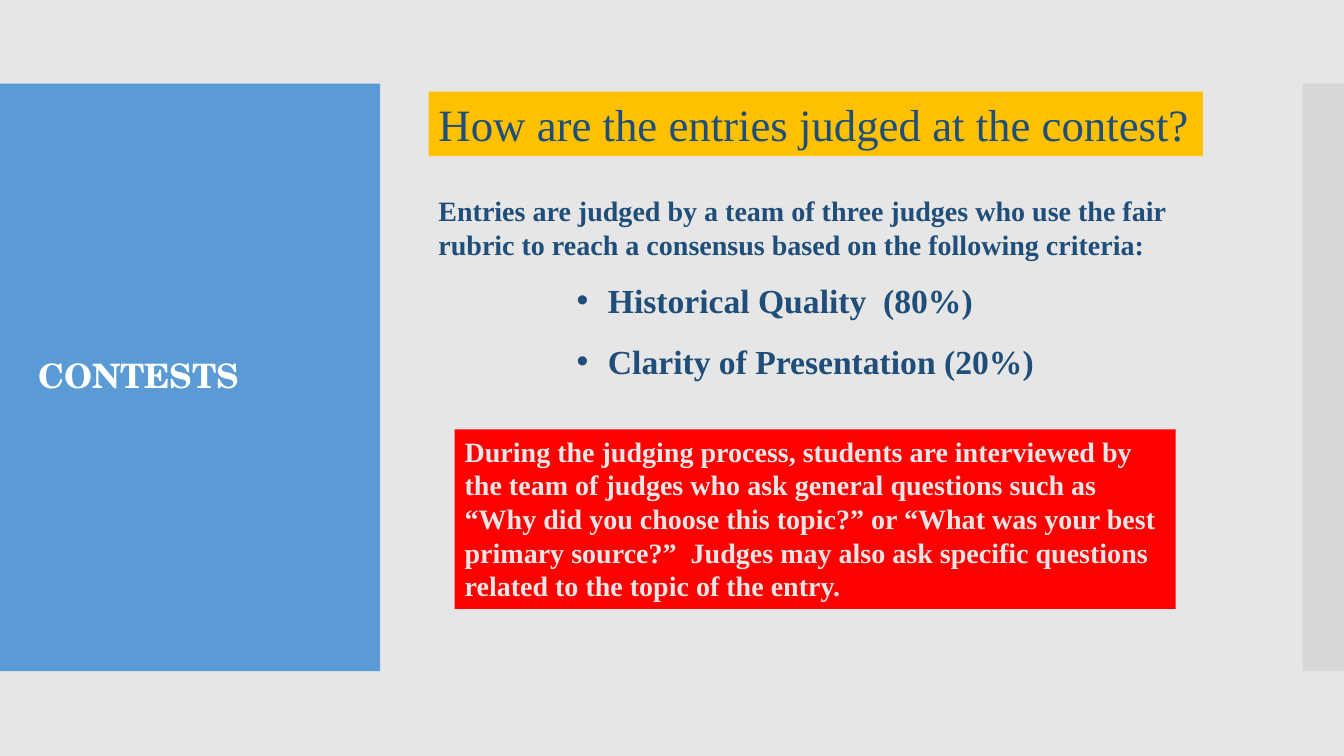
from dataclasses import dataclass

from lxml import etree
from pptx import Presentation
from pptx.dml.color import RGBColor
from pptx.enum.shapes import MSO_SHAPE
from pptx.enum.text import MSO_ANCHOR, MSO_AUTO_SIZE, PP_ALIGN
from pptx.oxml.ns import qn
from pptx.util import Inches, Pt

RECT = MSO_SHAPE.RECTANGLE
TOP, MIDDLE = MSO_ANCHOR.TOP, MSO_ANCHOR.MIDDLE
LEFT = PP_ALIGN.LEFT
NO_FIT = MSO_AUTO_SIZE.NONE


@dataclass(frozen=True)
class Theme:
    background: str = "E7E6E6"
    panel: str = "5B9BD5"
    edge: str = "C8C8C8"
    banner: str = "FFC000"
    alert: str = "FF0000"
    ink: str = "1E4E79"
    white: str = "FFFFFF"
    title_font: str = "TeX Gyre Schola"
    body_font: str = "Times New Roman"
    heading: int = 32
    large: int = 24
    normal: int = 20


THEME = Theme()


def set_attrs(obj, values):
    for name, value in values.items():
        setattr(obj, name, value)


def place(sp, box):
    names = ("left", "top", "width", "height")
    set_attrs(sp, dict(zip(names, map(Inches, box))))


def add_block(slide, box, color, alpha=None):
    sp = slide.shapes.add_shape(RECT, *map(Inches, box))
    sp.shadow.inherit = False
    sp.fill.solid()
    sp.fill.fore_color.rgb = RGBColor.from_string(color)
    sp.line.fill.background()
    if alpha is not None:
        clr = sp.fill._xPr.find(".//" + qn("a:srgbClr"))
        etree.SubElement(clr, qn("a:alpha"), val=str(alpha * 1000))
    return sp


def add_label(slide, box):
    return slide.shapes.add_textbox(*map(Inches, box))


def write(sp, lines, size, color, font=THEME.body_font, bold=True,
          anchor=TOP, spacing=1.0):
    tf = sp.text_frame
    set_attrs(tf, {
        "word_wrap": True, "auto_size": NO_FIT, "vertical_anchor": anchor,
        "margin_left": Inches(0.1), "margin_right": Inches(0.1),
        "margin_top": Inches(0.05), "margin_bottom": Inches(0.05),
    })
    tf.text = "\n".join(lines)
    for p in tf.paragraphs:
        set_attrs(p, {"alignment": LEFT, "line_spacing": spacing,
                      "space_before": Pt(0), "space_after": Pt(0)})
        for r in p.runs:
            set_attrs(r.font, {"name": font, "size": Pt(size), "bold": bold})
            r.font.color.rgb = RGBColor.from_string(color)


def add_bullets(sp, color, indent):
    for p in sp.text_frame.paragraphs:
        pPr = p._p.get_or_add_pPr()
        pPr.set("marL", str(Inches(indent)))
        pPr.set("indent", str(-Inches(indent)))
        clr = etree.SubElement(pPr, qn("a:buClr"))
        etree.SubElement(clr, qn("a:srgbClr"), val=color)
        etree.SubElement(pPr, qn("a:buFont"), typeface="Arial")
        etree.SubElement(pPr, qn("a:buChar"), char="•")


def main():
    prs = Presentation()
    prs.slide_width, prs.slide_height = Inches(13.33), Inches(7.5)
    slide = prs.slides.add_slide(prs.slide_layouts[1])
    fill = slide.background.fill
    fill.solid()
    fill.fore_color.rgb = RGBColor.from_string(THEME.background)

    panel = add_block(slide, (0, 0.83, 3.77, 5.83), THEME.panel)
    edge = add_block(slide, (12.92, 0.83, 0.41, 5.83), THEME.edge, alpha=49)
    title, criteria = slide.placeholders
    for sp in (panel, edge):
        title._element.addprevious(sp._element)

    place(title, (0.28, 1.23, 3.22, 5.03))
    write(title, ["CONTESTS"], THEME.large, THEME.white,
          font=THEME.title_font, anchor=MIDDLE, spacing=0.9)

    question = add_block(slide, (4.25, 0.91, 7.68, 0.64), THEME.banner)
    write(question, ["How are the entries judged at the contest?"],
          THEME.heading, THEME.ink, bold=False)

    intro = add_label(slide, (4.25, 1.87, 8.2, 1.18))
    write(intro, ["Entries are judged by a team of three judges who use the fair "
                  "rubric to reach a consensus based on the following criteria:"],
          THEME.normal, THEME.ink)

    place(criteria, (5.62, 2.53, 6.5, 1.31))
    write(criteria, ["Historical Quality  (80%)", "Clarity of Presentation (20%)"],
          THEME.large, THEME.ink, spacing=1.5)
    add_bullets(criteria, THEME.ink, 0.31)

    interview = add_block(slide, (4.51, 4.26, 7.15, 1.78), THEME.alert)
    write(interview, ["During the judging process, students are interviewed by the "
                      "team of judges who ask general questions such as “Why did you "
                      "choose this topic?” or “What was your best primary source?”  "
                      "Judges may also ask specific questions related to the topic "
                      "of the entry."],
          THEME.normal, THEME.background)

    prs.save("out.pptx")


if __name__ == "__main__":
    main()
